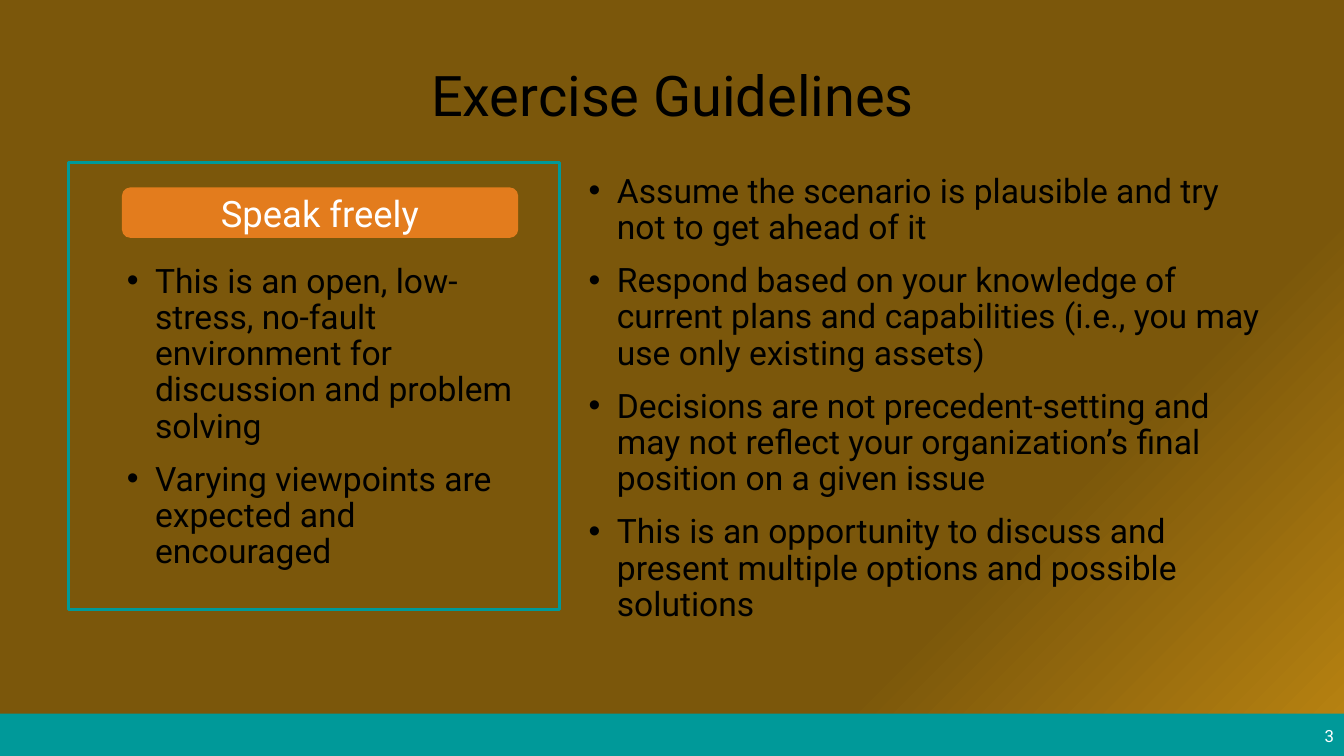
import pptx
import pptx.dml.color
import pptx.enum.shapes
import pptx.enum.text
import pptx.oxml
import pptx.oxml.ns
import pptx.util
from lxml import etree

EMU_PER_PX = 9144  # 100 px to the inch
FONT = "Roboto"
TEAL, ORANGE, BLACK, WHITE = "009999", "E37C1D", "000000", "FFFFFF"
BACKGROUND_STOPS = [(0, "7B570B"), (26, "7B570B"), (74, "7B570B"), (99, "B88311")]

ALIGN = pptx.enum.text.PP_ALIGN
ANCHOR = pptx.enum.text.MSO_ANCHOR
SHAPE = pptx.enum.shapes.MSO_SHAPE

SPEAK_FREELY_POINTS = [
    "This is an open, low‐stress, no‐fault environment for discussion and problem solving",
    "Varying viewpoints are expected and encouraged",
]
GUIDELINES = [
    "Assume the scenario is plausible and try not to get ahead of it",
    "Respond based on your knowledge of current plans and capabilities "
    "(i.e., you may use only existing assets)",
    "Decisions are not precedent-setting and may not reflect your "
    "organization’s final position on a given issue",
    "This is an opportunity to discuss and present multiple options and possible solutions",
]


def px(length):
    return pptx.util.Emu(length * EMU_PER_PX)


def rgb(hex_colour):
    return pptx.dml.color.RGBColor.from_string(hex_colour)


def add_run(paragraph, text, size, colour):
    run = paragraph.add_run()
    run.text = text
    run.font.name = FONT
    run.font.size = pptx.util.Pt(size)
    run.font.color.rgb = rgb(colour)


def set_background(slide):
    fill = slide.background.fill
    fill.gradient()
    fill.gradient_angle = 315
    qn = pptx.oxml.ns.qn
    stops = next(slide.element.iter(qn("a:gsLst")))
    for stop in list(stops):
        stops.remove(stop)
    for percent, colour in BACKGROUND_STOPS:
        stop = etree.SubElement(stops, qn("a:gs"), pos=str(percent * 1000))
        etree.SubElement(stop, qn("a:srgbClr"), val=colour)


def add_box(slide, kind, left, top, width, height, fill=None, line=None):
    box = slide.shapes.add_shape(kind, px(left), px(top), px(width), px(height))
    box.shadow.inherit = False
    if fill:
        box.fill.solid()
        box.fill.fore_color.rgb = rgb(fill)
    else:
        box.fill.background()
    if line:
        box.line.color.rgb = rgb(line)
        box.line.width = pptx.util.Pt(2.25)
    else:
        box.line.fill.background()
    return box


def add_text_frame(slide, left, top, width, height):
    frame = slide.shapes.add_textbox(px(left), px(top), px(width), px(height)).text_frame
    frame.word_wrap = True
    return frame


def write_line(frame, text, size, colour, align, anchor=ANCHOR.MIDDLE):
    frame.vertical_anchor = anchor
    paragraph = frame.paragraphs[0]
    paragraph.alignment = align
    add_run(paragraph, text, size, colour)


def add_bullets(slide, left, top, width, height, points):
    frame = add_text_frame(slide, left, top, width, height)
    for index, point in enumerate(points):
        paragraph = frame.add_paragraph() if index else frame.paragraphs[0]
        paragraph.line_spacing = 0.9
        if index:
            paragraph.space_before = pptx.util.Pt(12)
        properties = paragraph._p.get_or_add_pPr()
        properties.set("marL", str(px(28)))
        properties.set("indent", str(px(-28)))
        qn = pptx.oxml.ns.qn
        etree.SubElement(properties, qn("a:buFont"), typeface="Arial")
        etree.SubElement(properties, qn("a:buChar"), char="•")
        add_run(paragraph, point, 24, BLACK)


def main():
    deck = pptx.Presentation()
    deck.slide_width, deck.slide_height = px(1333), px(750)
    slide = deck.slides.add_slide(deck.slide_layouts[6])

    # Background and footer band
    set_background(slide)
    add_box(slide, SHAPE.RECTANGLE, 0, 708, 1333, 42, fill=TEAL)

    # Title
    title = add_text_frame(slide, 217, 30, 900, 127)
    write_line(title, "Exercise Guidelines", 40, BLACK, ALIGN.CENTER)

    # Framed panel on the left
    add_box(slide, SHAPE.RECTANGLE, 68, 161, 487, 444, line=TEAL)
    add_bullets(slide, 116, 257, 403, 436, SPEAK_FREELY_POINTS)
    heading = add_box(slide, SHAPE.ROUNDED_RECTANGLE, 121, 186, 393, 50, fill=ORANGE)
    write_line(heading.text_frame, "Speak freely", 26, WHITE, ALIGN.CENTER)

    # Guidelines on the right
    add_bullets(slide, 574, 168, 691, 444, GUIDELINES)

    # Slide number
    number = add_text_frame(slide, 730, 715, 603, 30)
    write_line(number, "3", 12, WHITE, ALIGN.RIGHT, ANCHOR.TOP)

    deck.save("out.pptx")


if __name__ == "__main__":
    main()
